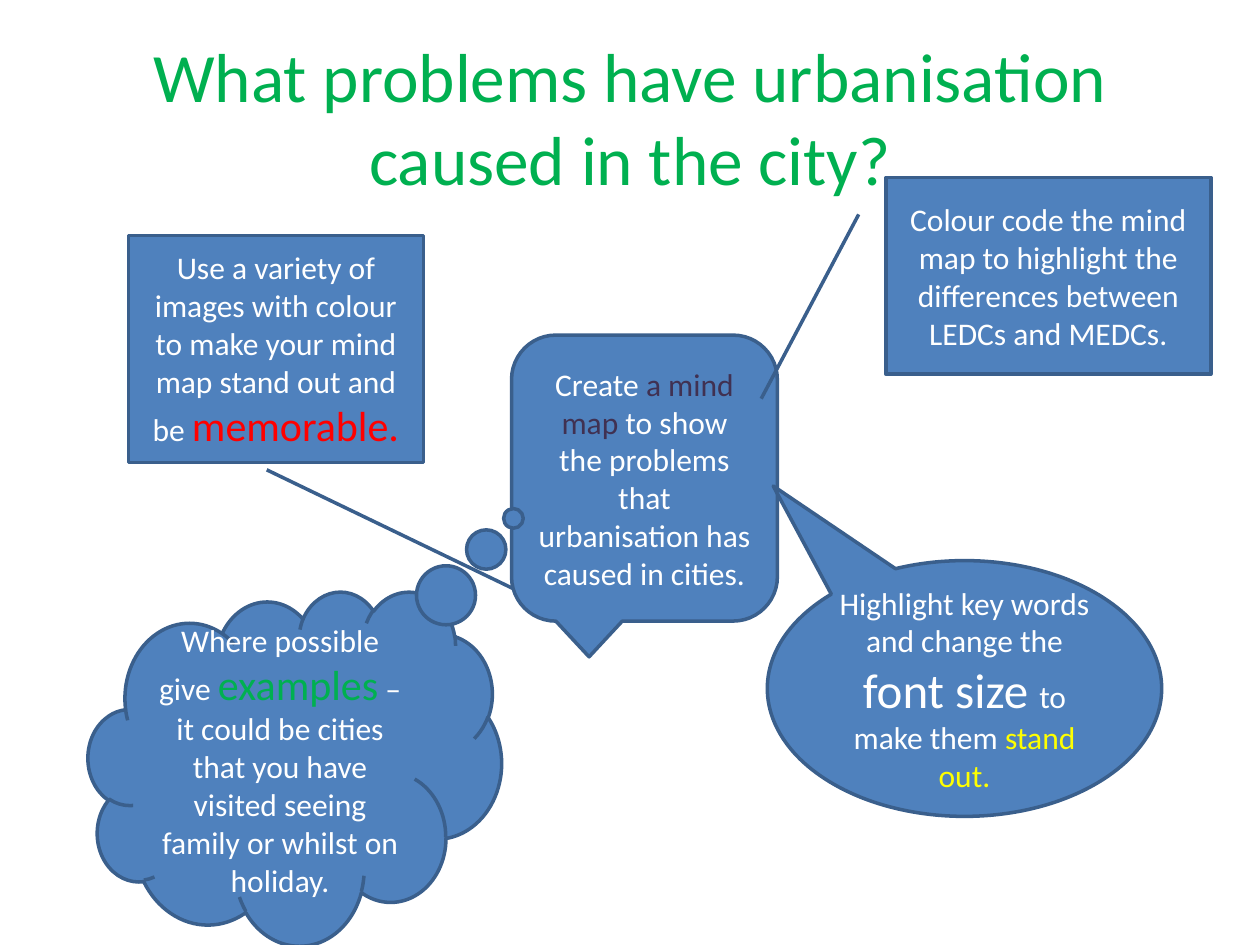
from typing import NamedTuple

from pptx import Presentation
from pptx.dml.color import RGBColor
from pptx.enum.shapes import MSO_SHAPE as Shape
from pptx.enum.text import MSO_ANCHOR as Anchor, MSO_AUTO_SIZE as AutoSize, PP_ALIGN as Align
from pptx.util import Inches, Pt

BLUE = RGBColor(0x4F, 0x81, 0xBD)
OUTLINE = RGBColor(0x3A, 0x5F, 0x8C)
WHITE = RGBColor(0xFF, 0xFF, 0xFF)
GREEN = RGBColor(0x00, 0xB0, 0x50)
PURPLE = RGBColor(0x40, 0x31, 0x52)
RED = RGBColor(0xFF, 0x00, 0x00)
YELLOW = RGBColor(0xFF, 0xFF, 0x00)

# Grid of 100 columns by 75 rows
COLS, ROWS = 100, 75
FRAME = {"word_wrap": True, "auto_size": AutoSize.NONE, "vertical_anchor": Anchor.MIDDLE}


class Box(NamedTuple):
    col: float
    row: float
    cols: float
    rows: float


class Run(NamedTuple):
    text: str
    size: float = 18
    color: RGBColor = WHITE


class Callout(NamedTuple):
    kind: Shape
    box: Box
    runs: tuple[Run, ...]
    adjustments: tuple[float, ...] = ()


TITLE = Run("What problems have urbanisation caused in the city?", 39.6, GREEN)

CALLOUTS = (
    Callout(Shape.ROUNDED_RECTANGULAR_CALLOUT, Box(40.6, 26.6, 21.1, 22.7), (
        Run("Create "),
        Run("a mind map", color=PURPLE),
        Run(" to show the problems that urbanisation has caused in cities."))),
    Callout(Shape.LINE_CALLOUT_1, Box(70.3, 14.1, 25.8, 15.6), (
        Run("Colour code the mind map to highlight the differences between LEDCs and MEDCs."),)),
    Callout(Shape.LINE_CALLOUT_1, Box(10.2, 18.7, 23.4, 18), (
        Run("Use a variety of images with colour to make your mind map stand out and be "),
        Run("memorable.", 24, RED)), (1.555, 1.302, 1.033, 0.469)),
    Callout(Shape.OVAL_CALLOUT, Box(60.9, 44.5, 31.3, 20.3), (
        Run("Highlight key words and change the "),
        Run("font size ", 28),
        Run("to make them "),
        Run("stand out.", color=YELLOW)), (-0.485, -0.792)),
    Callout(Shape.CLOUD_CALLOUT, Box(7, 46.9, 32.8, 28.1), (
        Run("Where possible give "),
        Run("examples", 24, GREEN),
        Run(" – it could be cities that you have visited seeing family or whilst on holiday.")),
        (0.529, -0.705)),
)


def place(prs, box: Box) -> dict[str, int]:
    """Turn a grid box into slide lengths."""
    col, row = prs.slide_width / COLS, prs.slide_height / ROWS
    return {"left": round(box.col * col), "top": round(box.row * row),
            "width": round(box.cols * col), "height": round(box.rows * row)}


def write(sp, runs: tuple[Run, ...]) -> None:
    """Fill a shape with one centred paragraph."""
    tf = sp.text_frame
    for name, value in FRAME.items():
        setattr(tf, name, value)
    p = tf.paragraphs[0]
    p.alignment = Align.CENTER
    for run in runs:
        r = p.add_run()
        r.text = run.text
        for name, value in {"name": "Calibri", "size": Pt(run.size)}.items():
            setattr(r.font, name, value)
        r.font.color.rgb = run.color


def draw_title(prs, s) -> None:
    sp = s.shapes.title
    for name, value in place(prs, Box(5, 3, 90, 12.5)).items():
        setattr(sp, name, value)
    write(sp, (TITLE,))


def draw_callout(prs, s, callout: Callout) -> None:
    sp = s.shapes.add_shape(callout.kind, **place(prs, callout.box))
    for i, value in enumerate(callout.adjustments):
        sp.adjustments[i] = value
    sp.shadow.inherit = False
    sp.fill.solid()
    sp.fill.fore_color.rgb = BLUE
    sp.line.color.rgb = OUTLINE
    sp.line.width = Pt(2)
    write(sp, callout.runs)


def main() -> None:
    prs = Presentation()
    prs.slide_width, prs.slide_height = Inches(10), Inches(7.5)
    s = prs.slides.add_slide(prs.slide_layouts.get_by_name("Title Only"))
    draw_title(prs, s)
    for callout in CALLOUTS:
        draw_callout(prs, s, callout)
    prs.save("out.pptx")


if __name__ == "__main__":
    main()
